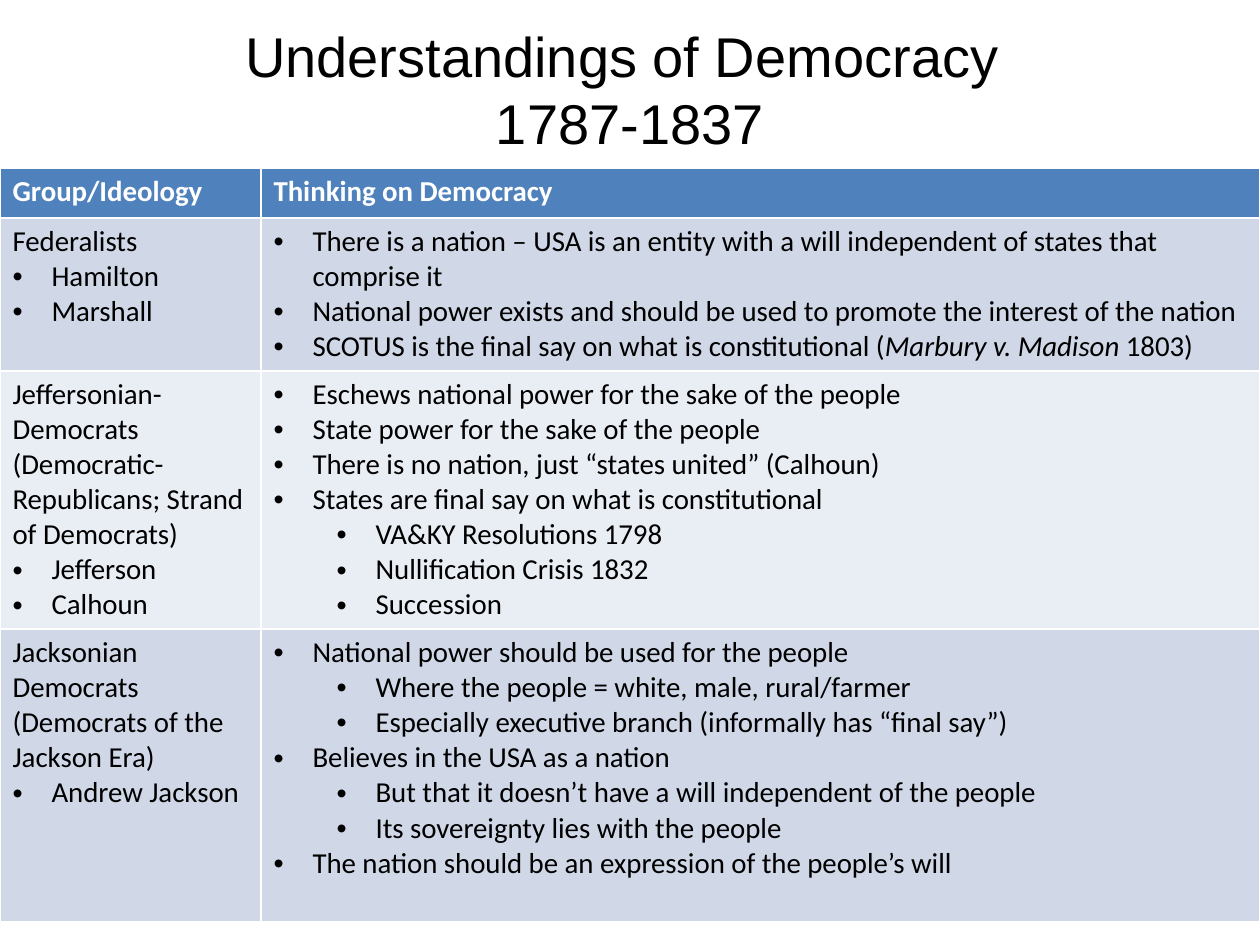
from lxml.etree import SubElement
from pptx import Presentation
from pptx.dml.color import RGBColor
from pptx.enum.text import MSO_ANCHOR, MSO_AUTO_SIZE, PP_ALIGN
from pptx.oxml.ns import qn
from pptx.util import Emu, Pt

BLACK = RGBColor(0x00, 0x00, 0x00)
WHITE = RGBColor(0xFF, 0xFF, 0xFF)
BLUE = RGBColor(0x4F, 0x81, 0xBD)
BAND_DARK = RGBColor(0xD0, 0xD8, 0xE8)
BAND_LIGHT = RGBColor(0xE9, 0xED, 0xF4)

HANG, STEP = 39, 63
COLUMN_WIDTHS = [261, 999]
ROW_HEIGHTS = [50, 153, 258, 293]
ROW_FILLS = [BLUE, BAND_DARK, BAND_LIGHT, BAND_DARK]

# Each paragraph is (bullet level, text); level None is plain, *...* is italic.
ROWS = [
    [[(None, "Group/Ideology")], [(None, "Thinking on Democracy")]],
    [
        [(None, "Federalists"), (0, "Hamilton"), (0, "Marshall")],
        [
            (0, "There is a nation – USA is an entity with a will independent of states that comprise it"),
            (0, "National power exists and should be used to promote the interest of the nation"),
            (0, "SCOTUS is the final say on what is constitutional (*Marbury v. Madison* 1803)"),
        ],
    ],
    [
        [
            (None, "Jeffersonian-Democrats"),
            (None, "(Democratic-Republicans; Strand of Democrats)"),
            (0, "Jefferson"),
            (0, "Calhoun"),
        ],
        [
            (0, "Eschews national power for the sake of the people"),
            (0, "State power for the sake of the people"),
            (0, "There is no nation, just “states united” (Calhoun)"),
            (0, "States are final say on what is constitutional"),
            (1, "VA&KY Resolutions 1798"),
            (1, "Nullification Crisis 1832"),
            (1, "Succession"),
        ],
    ],
    [
        [
            (None, "Jacksonian Democrats"),
            (None, "(Democrats of the Jackson Era)"),
            (0, "Andrew Jackson"),
        ],
        [
            (0, "National power should be used for the people"),
            (1, "Where the people = white, male, rural/farmer"),
            (1, "Especially executive branch (informally has “final say”)"),
            (0, "Believes in the USA as a nation"),
            (1, "But that it doesn’t have a will independent of the people"),
            (1, "Its sovereignty lies with the people"),
            (0, "The nation should be an expression of the people’s will"),
        ],
    ],
]


def px(n):
    return Emu(round(n * 914400 / 126))


def add_bullet(p, level):
    p.level = level
    pPr = p._p.get_or_add_pPr()
    pPr.set("marL", str(px(HANG + STEP * level)))
    pPr.set("indent", str(-px(HANG)))
    SubElement(pPr, qn("a:buFont")).set("typeface", "Arial")
    SubElement(pPr, qn("a:buChar")).set("char", "•")


prs = Presentation()
prs.slide_width, prs.slide_height = px(1260), px(945)
s = prs.slides.add_slide(prs.slide_layouts[5])

title = s.shapes.title
title.left, title.top, title.width, title.height = px(63), px(10), px(1134), px(158)
tf = title.text_frame
tf.text = "Understandings of Democracy \v1787-1837"
tf.word_wrap = True
tf.auto_size = MSO_AUTO_SIZE.NONE
tf.vertical_anchor = MSO_ANCHOR.MIDDLE
p = tf.paragraphs[0]
p.alignment = PP_ALIGN.CENTER
for r in p.runs:
    for name, value in {"name": "Arial", "size": Pt(32)}.items():
        setattr(r.font, name, value)
    r.font.color.rgb = BLACK

table = s.shapes.add_table(
    len(ROWS), len(COLUMN_WIDTHS), px(0), px(168), px(sum(COLUMN_WIDTHS)), px(sum(ROW_HEIGHTS))
).table
for column, width in zip(table.columns, COLUMN_WIDTHS):
    column.width = px(width)

for i, row in enumerate(ROWS):
    table.rows[i].height = px(ROW_HEIGHTS[i])
    is_header = i == 0
    for j, paragraphs in enumerate(row):
        cell = table.cell(i, j)
        cell.fill.solid()
        cell.fill.fore_color.rgb = ROW_FILLS[i]
        tf = cell.text_frame
        for k, (level, text) in enumerate(paragraphs):
            p = tf.add_paragraph() if k else tf.paragraphs[0]
            if level is not None:
                add_bullet(p, level)
            for n, part in enumerate(text.split("*")):
                r = p.add_run()
                r.text = part
                style = {"name": "Calibri", "size": Pt(16.5), "bold": is_header, "italic": n % 2 == 1}
                for name, value in style.items():
                    setattr(r.font, name, value)
                r.font.color.rgb = WHITE if is_header else BLACK

prs.save("out.pptx")
